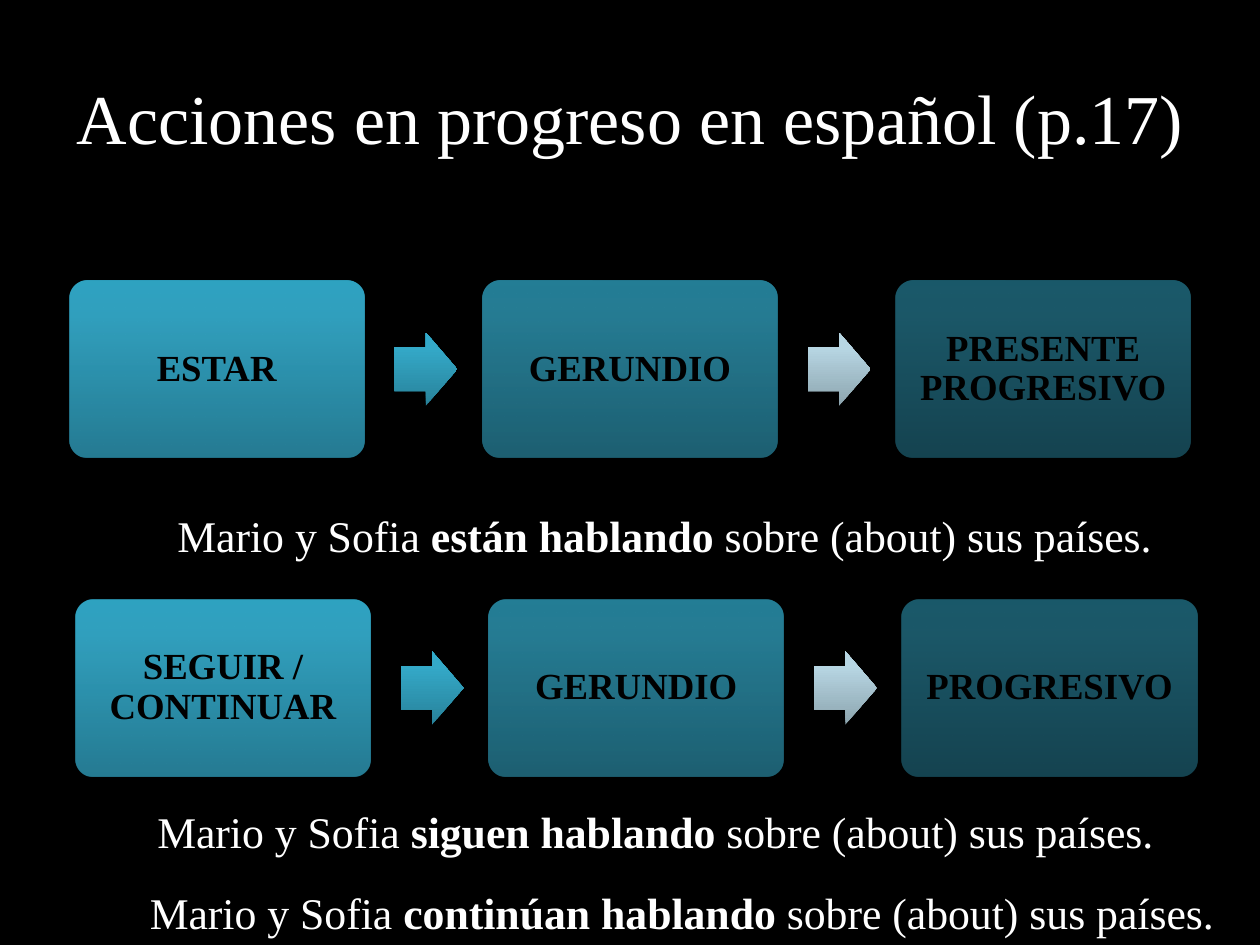
from dataclasses import dataclass

import lxml.etree
import pptx
import pptx.dml.color
import pptx.enum.shapes
import pptx.enum.text
import pptx.oxml.ns
import pptx.util

Inches = pptx.util.Inches
Pt = pptx.util.Pt
SHAPE = pptx.enum.shapes.MSO_SHAPE
ALIGN = pptx.enum.text.PP_ALIGN
ANCHOR = pptx.enum.text.MSO_ANCHOR
qn = pptx.oxml.ns.qn

FONT = "Times New Roman"
COLORS = {"background": "000000", "light": "FFFFFF", "dark": "000000"}
GRADIENTS = {
    "box": {0: "2A88A2", 80: "37B1D2", 100: "34B4D6"},
    "first_arrow": {0: "28829A", 80: "34A9C8", 100: "32ABCC"},
    "second_arrow": {0: "8DA5AF", 80: "B7D6E3", 100: "B7D8E5"},
}
BOX_W, BOX_H, BOX_STEP = 2.34, 1.4, 3.28
ARROW_W, ARROW_H, ARROW_OFFSET = 0.5, 0.58, 2.58
BOX_OPACITIES = (90, 70, 50)
ARROW_GRADIENTS = ("first_arrow", "second_arrow")


@dataclass
class Process:
    left: float
    top: float
    steps: tuple[str, str, str]


@dataclass
class Example:
    left: float
    top: float
    width: float
    verb: str


PROCESSES = [
    Process(0.55, 2.23, ("ESTAR", "GERUNDIO", "PRESENTE PROGRESIVO")),
    Process(0.6, 4.76, ("SEGUIR / CONTINUAR", "GERUNDIO", "PROGRESIVO")),
]
EXAMPLES = [
    Example(1.31, 3.99, 8.14, "están hablando "),
    Example(1.15, 6.34, 8.33, "siguen hablando "),
    Example(1.09, 6.98, 8.91, "continúan hablando "),
]


def rgb(name: str) -> pptx.dml.color.RGBColor:
    return pptx.dml.color.RGBColor.from_string(COLORS[name])


def set_font(p, size: float, color: str, bold: bool | None = None) -> None:
    p.font.name = FONT
    p.font.size = Pt(size)
    p.font.color.rgb = rgb(color)
    p.font.bold = bold


def fill_gradient(sp, name: str, opacity: int) -> None:
    sp.fill.gradient()
    sp.fill.gradient_angle = 90
    stops = sp._element.spPr.find(qn("a:gradFill")).find(qn("a:gsLst"))
    for gs in list(stops):
        stops.remove(gs)
    for position, color in GRADIENTS[name].items():
        gs = lxml.etree.SubElement(stops, qn("a:gs"), pos=str(position * 1000))
        clr = lxml.etree.SubElement(gs, qn("a:srgbClr"), val=color)
        if opacity < 100:
            lxml.etree.SubElement(clr, qn("a:alpha"), val=str(opacity * 1000))


def add_block(shapes, kind, left: float, top: float, width: float, height: float,
              adjustments: tuple, gradient: str, opacity: int = 100):
    sp = shapes.add_shape(kind, Inches(left), Inches(top), Inches(width), Inches(height))
    for i, value in enumerate(adjustments):
        sp.adjustments[i] = value
    sp.shadow.inherit = False
    sp.line.fill.background()
    fill_gradient(sp, gradient, opacity)
    return sp


def add_process(slide, process: Process) -> None:
    shapes = slide.shapes.add_group_shape().shapes
    for i, (text, opacity) in enumerate(zip(process.steps, BOX_OPACITIES)):
        left = process.left + i * BOX_STEP
        sp = add_block(shapes, SHAPE.ROUNDED_RECTANGLE, left, process.top,
                       BOX_W, BOX_H, (0.1,), "box", opacity)
        tf = sp.text_frame
        tf.word_wrap = True
        tf.vertical_anchor = ANCHOR.MIDDLE
        tf.margin_left = tf.margin_right = tf.margin_top = tf.margin_bottom = Inches(0.09)
        p = tf.paragraphs[0]
        p.text = text
        p.alignment = ALIGN.CENTER
        p.line_spacing = 0.9
        set_font(p, 21, "dark", True)
        if i < len(ARROW_GRADIENTS):
            add_block(shapes, SHAPE.RIGHT_ARROW, left + ARROW_OFFSET,
                      process.top + (BOX_H - ARROW_H) / 2, ARROW_W, ARROW_H,
                      (0.6, 0.5), ARROW_GRADIENTS[i])


def add_example(slide, example: Example) -> None:
    sp = slide.shapes.add_textbox(Inches(example.left), Inches(example.top),
                                  Inches(example.width), Inches(0.52))
    tf = sp.text_frame
    tf.word_wrap = False
    tf.auto_size = pptx.enum.text.MSO_AUTO_SIZE.SHAPE_TO_FIT_TEXT
    p = tf.paragraphs[0]
    set_font(p, 25, "light")
    for text in ("Mario y Sofia ", example.verb, "sobre (about) sus países."):
        r = p.add_run()
        r.text = text
        r.font.bold = text == example.verb


def add_title(slide, text: str) -> None:
    sp = slide.shapes.title
    sp.left, sp.top, sp.width, sp.height = map(Inches, (0.5, 0.3, 9, 1.25))
    tf = sp.text_frame
    tf.vertical_anchor = ANCHOR.MIDDLE
    p = tf.paragraphs[0]
    p.text = text
    p.alignment = ALIGN.CENTER
    set_font(p, 40, "light")


def main() -> None:
    prs = pptx.Presentation()
    prs.slide_width, prs.slide_height = Inches(10), Inches(7.5)
    slide = prs.slides.add_slide(prs.slide_layouts[5])
    slide.background.fill.solid()
    slide.background.fill.fore_color.rgb = rgb("background")
    add_title(slide, "Acciones en progreso en español (p.17)")
    for process in PROCESSES:
        add_process(slide, process)
    for example in EXAMPLES:
        add_example(slide, example)
    prs.save("out.pptx")


if __name__ == "__main__":
    main()
